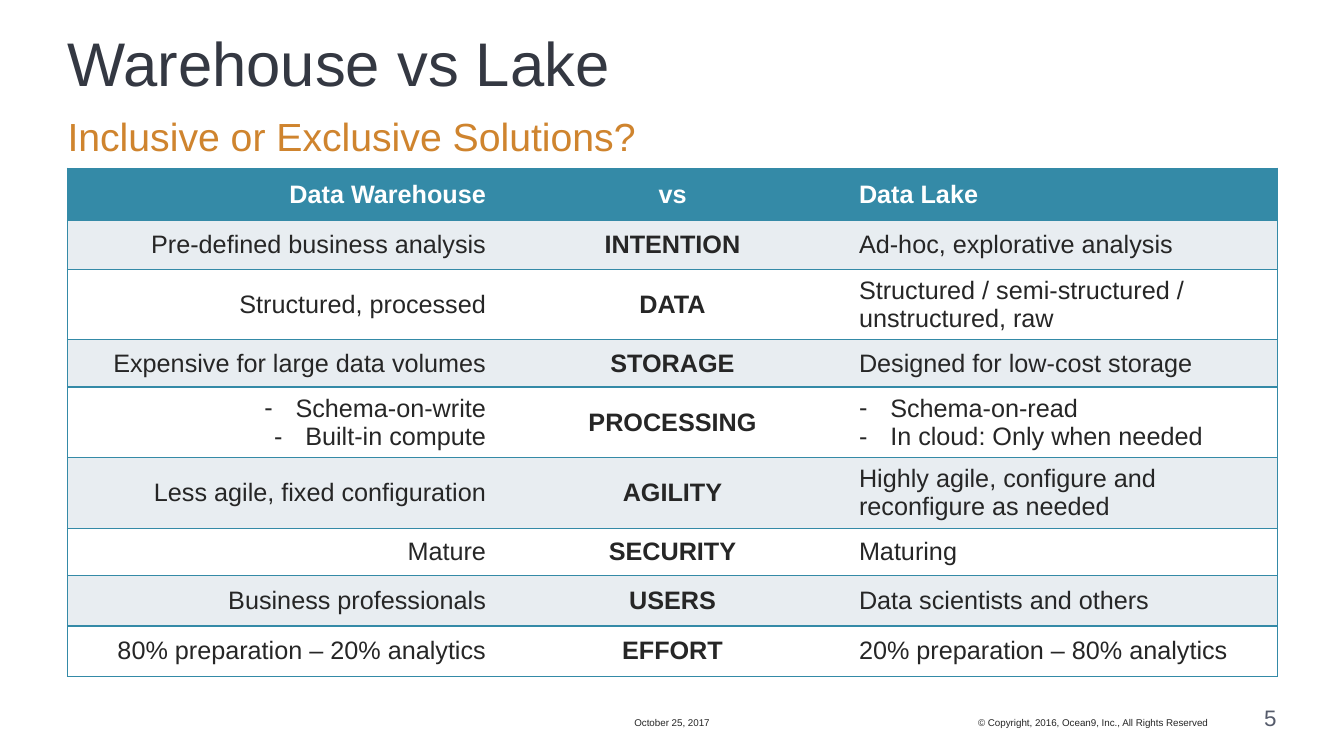
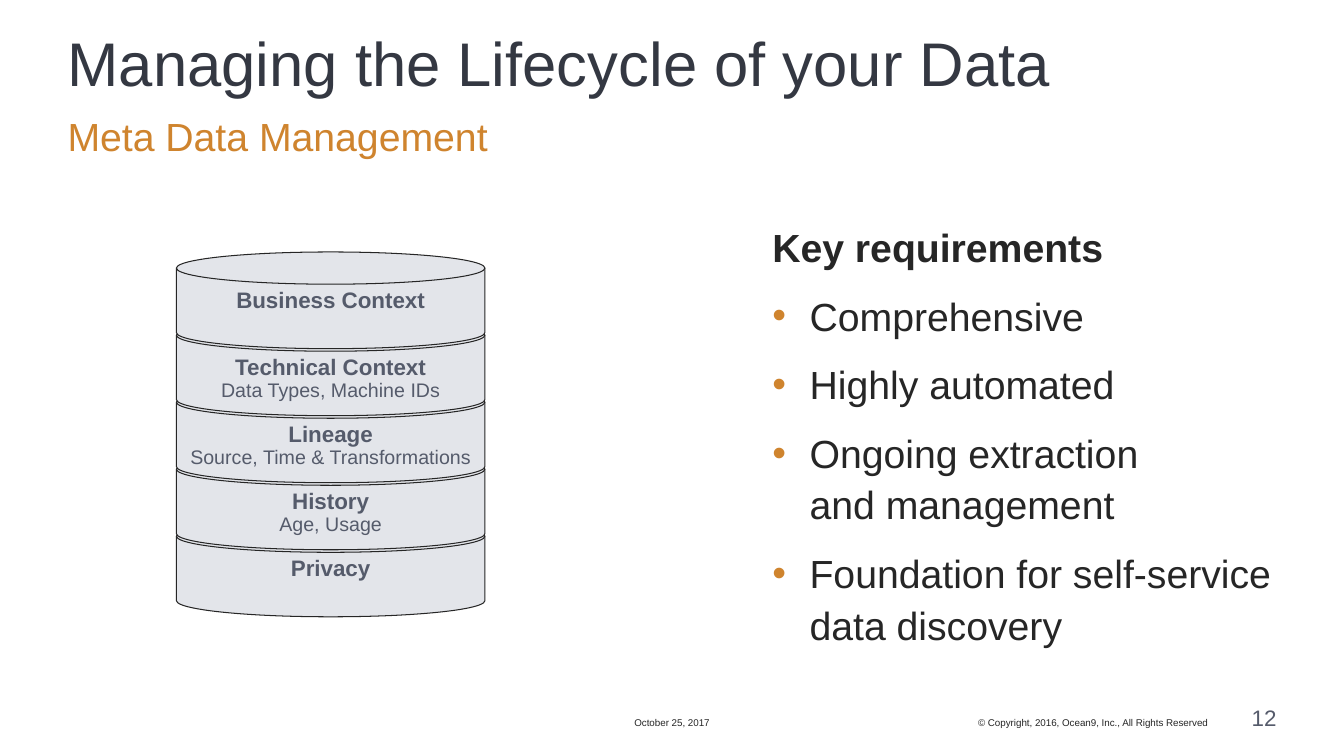
"""Build two slides on data warehouses, data lakes and metadata management."""
from dataclasses import dataclass

from lxml import etree
from pptx import Presentation
from pptx.dml.color import RGBColor as RGB
from pptx.enum.shapes import MSO_SHAPE as SHAPE
from pptx.enum.text import MSO_ANCHOR as ANCHOR, PP_ALIGN as ALIGN
from pptx.oxml.ns import qn
from pptx.util import Inches, Pt


@dataclass(frozen=True)
class Theme:
    font: str = "Arial"
    title: str = "343842"
    accent: str = "CF842E"
    text: str = "262626"
    muted: str = "555B6B"
    teal: str = "348AA7"
    band: str = "E8EDF1"
    disk: str = "E3E5EA"
    white: str = "FFFFFF"
    title_size: int = 44
    large_size: int = 28
    table_size: int = 18
    label_size: int = 16
    detail_size: int = 14
    footer_size: int = 7


def add_text(p, text, size, color, bold=False, align=ALIGN.LEFT, spacing=None,
             bullet=None, indent=0, bullet_color=None):
    """Write text as runs with line breaks, optionally behind a bullet."""
    p.alignment = align
    if spacing:
        p.line_spacing = spacing
    if bullet:
        pPr = p._p.get_or_add_pPr()
        pPr.set("marL", str(Inches(indent)))
        pPr.set("indent", str(-Inches(indent)))
        if bullet_color:
            clr = etree.SubElement(pPr, qn("a:buClr"))
            etree.SubElement(clr, qn("a:srgbClr"), val=bullet_color)
        etree.SubElement(pPr, qn("a:buFont"), typeface=theme.font)
        etree.SubElement(pPr, qn("a:buChar"), char=bullet)
    for i, line in enumerate(text.split("\n")):
        if i:
            p.add_line_break()
        r = p.add_run()
        r.text = line
        r.font.name = theme.font
        r.font.size = Pt(size)
        r.font.bold = bold
        r.font.color.rgb = RGB.from_string(color)


def add_box(s, box, anchor=ANCHOR.TOP):
    """Add a wrapping text box without insets and return its text frame."""
    tf = s.shapes.add_textbox(*map(Inches, box)).text_frame
    tf.word_wrap = True
    tf.vertical_anchor = anchor
    tf.margin_left = tf.margin_top = tf.margin_right = tf.margin_bottom = 0
    return tf


theme = Theme()
prs = Presentation()
prs.slide_width, prs.slide_height = Inches(13.33), Inches(7.5)

headings = [
    ("Warehouse vs Lake", "Inclusive or Exclusive Solutions?", "5"),
    ("Managing the Lifecycle of your Data", "Meta Data Management", "12"),
]
slides = []
for title, subtitle, number in headings:
    s = prs.slides.add_slide(prs.slide_layouts[6])
    slides.append(s)
    for box, text, size, color in [
        ((0.67, 0.33, 12, 0.75), title, theme.title_size, theme.title),
        ((0.67, 1.17, 12, 0.58), subtitle, theme.large_size, theme.accent),
    ]:
        add_text(add_box(s, box).paragraphs[0], text, size, color, spacing=0.9)
    for box, text, size, color, align in [
        ((6.12, 7, 1.09, 0.23), "October 25, 2017",
         theme.footer_size, theme.text, ALIGN.CENTER),
        ((7.58, 7, 4.4, 0.23), "© Copyright, 2016, Ocean9, Inc., All Rights Reserved",
         theme.footer_size, theme.text, ALIGN.RIGHT),
        ((12.08, 7, 0.58, 0.25), number,
         theme.label_size, theme.muted, ALIGN.RIGHT),
    ]:
        p = add_box(s, box, ANCHOR.BOTTOM).paragraphs[0]
        add_text(p, text, size, color, align=align)

comparison_slide, lifecycle_slide = slides

rows = [
    (0.52, "Data Warehouse", "vs", "Data Lake"),
    (0.48, "Pre-defined business analysis", "INTENTION", "Ad-hoc, explorative analysis"),
    (0.7, "Structured, processed", "DATA",
     "Structured / semi-structured / unstructured, raw"),
    (0.47, "Expensive for large data volumes", "STORAGE", "Designed for low-cost storage"),
    (0.7, ["Schema-on-write", "Built-in compute"], "PROCESSING",
     ["Schema-on-read", "In cloud: Only when needed"]),
    (0.7, "Less agile, fixed configuration", "AGILITY",
     "Highly agile, configure and reconfigure as needed"),
    (0.47, "Mature", "SECURITY", "Maturing"),
    (0.5, "Business professionals", "USERS", "Data scientists and others"),
    (0.5, "80% preparation – 20% analytics", "EFFORT", "20% preparation – 80% analytics"),
]
aligns = [ALIGN.RIGHT, ALIGN.CENTER, ALIGN.LEFT]
table = comparison_slide.shapes.add_table(
    len(rows), 3, Inches(0.67), Inches(1.67), Inches(12), Inches(5.03)).table
for column, width in zip(table.columns, [4.25, 3.5, 4.25]):
    column.width = Inches(width)
for i, (height, *contents) in enumerate(rows):
    table.rows[i].height = Inches(height)
    header = i == 0
    fill = theme.teal if header else theme.band if i % 2 else theme.white
    color = theme.white if header else theme.text
    for j, content in enumerate(contents):
        cell = table.cell(i, j)
        cell.vertical_anchor = ANCHOR.MIDDLE
        tcPr = cell._tc.get_or_add_tcPr()
        for side, drawn in [("L", j == 0), ("R", j == 2), ("T", True), ("B", True)]:
            ln = etree.SubElement(tcPr, qn(f"a:ln{side}"), w=str(Pt(1)))
            if drawn:
                solid = etree.SubElement(ln, qn("a:solidFill"))
                etree.SubElement(solid, qn("a:srgbClr"), val=theme.teal)
            else:
                etree.SubElement(ln, qn("a:noFill"))
        cell.fill.solid()
        cell.fill.fore_color.rgb = RGB.from_string(fill)
        bulleted = isinstance(content, list)
        tf = cell.text_frame
        for k, line in enumerate(content if bulleted else [content]):
            p = tf.add_paragraph() if k else tf.paragraphs[0]
            add_text(p, line, theme.table_size, color, header or j == 1, aligns[j],
                     bullet="-" if bulleted else None, indent=0.31)

tf = add_box(lifecycle_slide, (7.66, 2.17, 5.43, 4.5))
add_text(tf.paragraphs[0], "Key requirements", theme.large_size, theme.text,
         bold=True, spacing=1.1)
for requirement in [
    "Comprehensive",
    "Highly automated",
    "Ongoing extraction\nand management",
    "Foundation for self-service data discovery",
]:
    p = tf.add_paragraph()
    p.space_before = Pt(12)
    add_text(p, requirement, theme.large_size, theme.text, spacing=1.1,
             bullet="•", indent=0.37, bullet_color=theme.accent)

layers = [
    ("Business Context", None),
    ("Technical Context", "Data Types, Machine IDs"),
    ("Lineage", "Source, Time & Transformations"),
    ("History", "Age, Usage"),
    ("Privacy", None),
]
stack = lifecycle_slide.shapes.add_group_shape()
for i, (label, detail) in reversed(list(enumerate(layers))):
    sp = stack.shapes.add_shape(SHAPE.FLOWCHART_MAGNETIC_DISK, Inches(1.75),
                                Inches(2.5 + i * 2.66 / 4), Inches(3.06), Inches(0.96))
    sp.shadow.inherit = False
    sp.fill.solid()
    sp.fill.fore_color.rgb = RGB.from_string(theme.disk)
    sp.line.color.rgb = RGB.from_string(theme.text)
    sp.line.width = Pt(0.75)
    tf = sp.text_frame
    tf.word_wrap = True
    tf.vertical_anchor = ANCHOR.TOP
    add_text(tf.paragraphs[0], label, theme.label_size, theme.muted, True,
             ALIGN.CENTER, 0.9)
    if detail:
        add_text(tf.add_paragraph(), detail, theme.detail_size, theme.muted,
                 align=ALIGN.CENTER, spacing=0.9)

prs.save("out.pptx")
